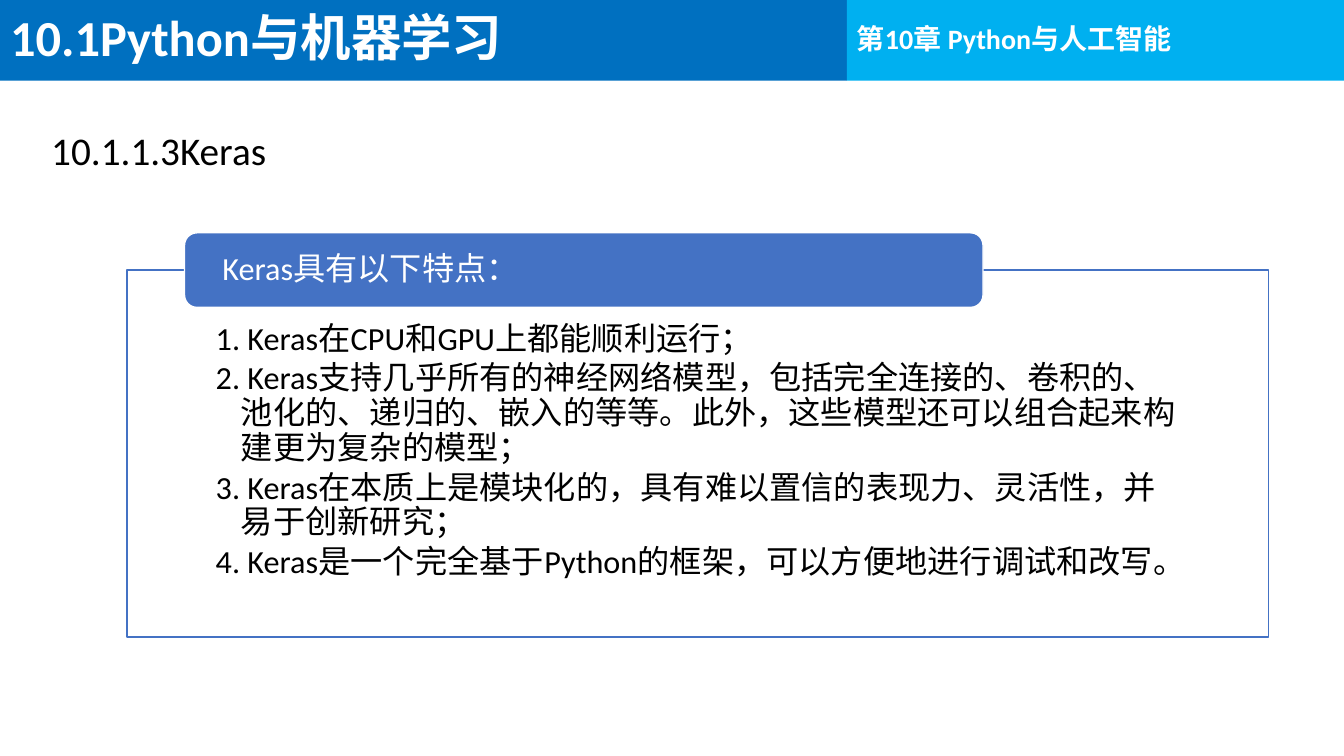
from lxml import etree
from pptx import Presentation
from pptx.dml.color import RGBColor
from pptx.enum.shapes import MSO_SHAPE as Preset
from pptx.enum.text import MSO_ANCHOR as Anchor, MSO_AUTO_SIZE as AutoSize, PP_ALIGN as Align
from pptx.oxml.ns import qn
from pptx.util import Inches, Pt

TITLE = "10.1Python与机器学习"
CHAPTER = "第10章 Python与人工智能"
SECTION = "10.1.1.3Keras"
FEATURES_HEADING = "Keras具有以下特点："
FEATURES = [
    "1. Keras在CPU和GPU上都能顺利运行；",
    "2. Keras支持几乎所有的神经网络模型，包括完全连接的、卷积的、池化的、递归的、嵌入的等等。此外，这些模型还可以组合起来构建更为复杂的模型；",
    "3. Keras在本质上是模块化的，具有难以置信的表现力、灵活性，并易于创新研究；",
    "4. Keras是一个完全基于Python的框架，可以方便地进行调试和改写。",
]

FONT = "Calibri"
WHITE = RGBColor(0xFF, 0xFF, 0xFF)
BLACK = RGBColor(0x00, 0x00, 0x00)
DARK_BLUE = RGBColor(0x00, 0x70, 0xC0)
SKY_BLUE = RGBColor(0x00, 0xB0, 0xF0)
ACCENT_BLUE = RGBColor(0x44, 0x72, 0xC4)

SLIDE_WIDTH, SLIDE_HEIGHT = 13.33, 7.5
HEADER_HEIGHT = 0.8
TITLE_WIDTH = 8.4
PANEL = (1.26, 2.68, 11.32, 3.64)
HEADING = (1.83, 2.31, 7.92, 0.74)
HANGING = Inches(0.25)


def inches(box):
    return [Inches(value) for value in box]


def write(shape, lines, size, color, anchor=Anchor.MIDDLE, insets=(0.1, 0.05, 0.1, 0.05),
          bold=False, spacing=0.9, before=0, after=0):
    frame = shape.text_frame
    frame.word_wrap = True
    frame.auto_size = AutoSize.NONE
    frame.vertical_anchor = anchor
    (frame.margin_left, frame.margin_top,
     frame.margin_right, frame.margin_bottom) = inches(insets)
    frame.text = "\n".join(lines)
    for paragraph in frame.paragraphs:
        paragraph.alignment = Align.LEFT
        paragraph.line_spacing = spacing
        paragraph.space_before = Pt(before)
        paragraph.space_after = Pt(after)
        paragraph.font.name = FONT
        paragraph.font.size = Pt(size)
        paragraph.font.bold = bold
        paragraph.font.color.rgb = color


def add_block(slide, preset, box, fill, line=None):
    shape = slide.shapes.add_shape(preset, *inches(box))
    shape.shadow.inherit = False
    shape.fill.solid()
    shape.fill.fore_color.rgb = fill
    if line is None:
        shape.line.fill.background()
    else:
        shape.line.color.rgb = line
        shape.line.width = Pt(1)
    return shape


def add_header(slide):
    title = slide.shapes.title
    title.left, title.top, title.width, title.height = inches((0, 0, TITLE_WIDTH, HEADER_HEIGHT))
    title.fill.solid()
    title.fill.fore_color.rgb = DARK_BLUE
    write(title, [TITLE], 36, WHITE, bold=True)

    chapter_box = (TITLE_WIDTH, 0, SLIDE_WIDTH - TITLE_WIDTH, HEADER_HEIGHT)
    chapter = add_block(slide, Preset.RECTANGLE, chapter_box, SKY_BLUE)
    write(chapter, [CHAPTER], 20, WHITE, bold=True)


def add_features(slide):
    panel = add_block(slide, Preset.RECTANGLE, PANEL, WHITE, ACCENT_BLUE)
    panel_color = panel.fill._xPr.find(qn("a:solidFill"))[0]
    etree.SubElement(panel_color, qn("a:alpha"), val="90000")
    write(panel, FEATURES, 23, BLACK, Anchor.TOP, (0.88, 0.52, 0.88, 0.18), after=3.5)
    for paragraph in panel.text_frame.paragraphs:
        properties = paragraph._p.get_or_add_pPr()
        properties.set("marL", str(HANGING))
        properties.set("indent", str(-HANGING))

    heading = add_block(slide, Preset.ROUNDED_RECTANGLE, HEADING, ACCENT_BLUE, WHITE)
    write(heading, [FEATURES_HEADING], 23, WHITE, insets=(0.34, 0.04, 0.34, 0.04))


def main():
    presentation = Presentation()
    presentation.slide_width = Inches(SLIDE_WIDTH)
    presentation.slide_height = Inches(SLIDE_HEIGHT)
    slide = presentation.slides.add_slide(presentation.slide_layouts[5])
    add_header(slide)
    section = slide.shapes.add_textbox(*inches((0.41, 1.2, 12.65, 0.8)))
    write(section, [SECTION], 28, BLACK, Anchor.TOP, spacing=1.0, before=10)
    add_features(slide)
    presentation.save("out.pptx")


if __name__ == "__main__":
    main()
